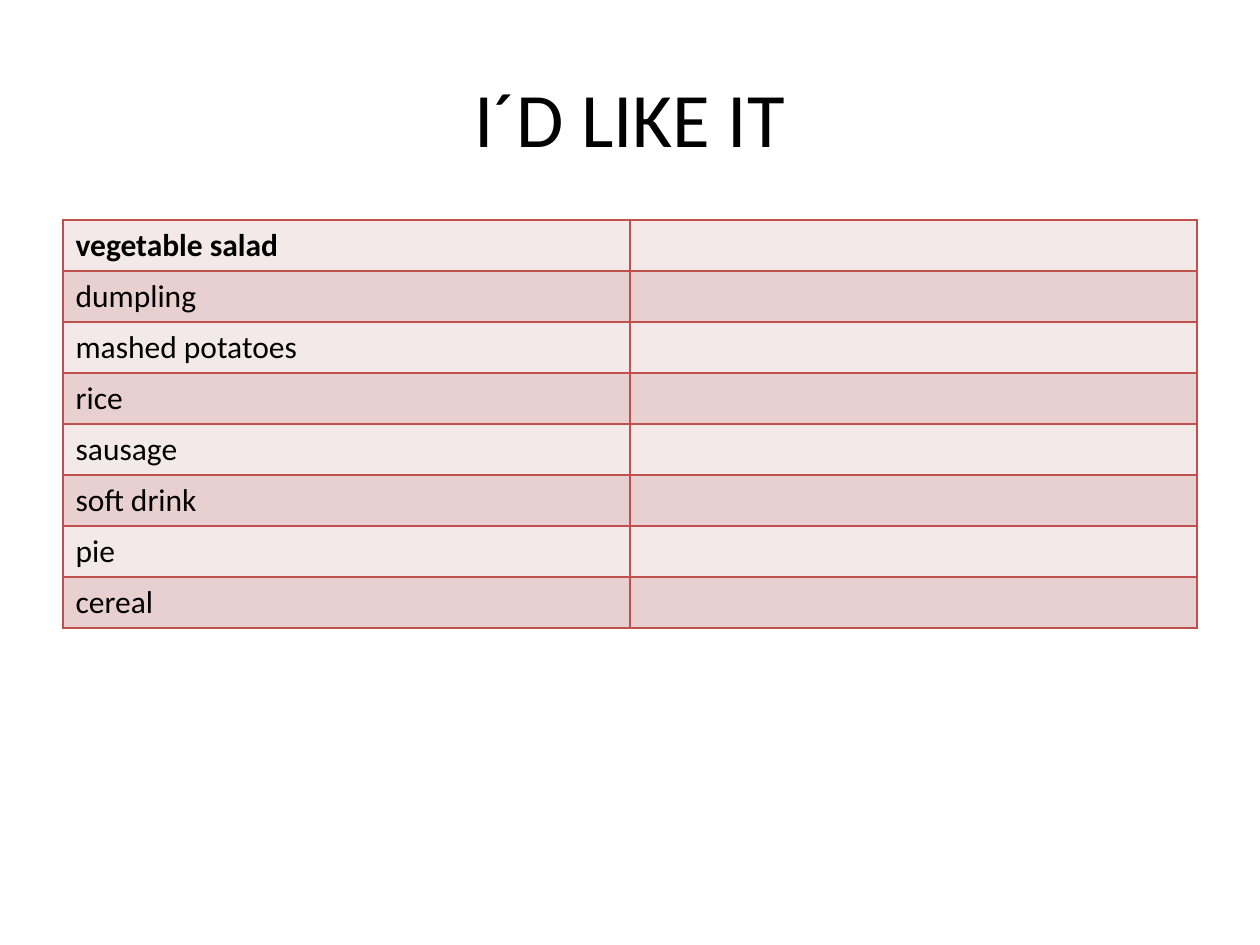
from lxml.etree import SubElement
from pptx import Presentation
from pptx.dml.color import RGBColor
from pptx.enum.text import MSO_ANCHOR, PP_ALIGN
from pptx.oxml.ns import qn
from pptx.util import Emu, Pt

PX_PER_INCH = 126
FONT = "Calibri"
COLORS = {
    "text": "000000",
    "border": "C0504D",
    "light": "F4E9E9",
    "dark": "E8D0D0",
}
FOODS = ["vegetable salad", "dumpling", "mashed potatoes", "rice",
         "sausage", "soft drink", "pie", "cereal"]


def px(n):
    return Emu(round(n * 914400 / PX_PER_INCH))


def rgb(name):
    return RGBColor.from_string(COLORS[name])


def style(p, size, bold=False):
    p.font.name = FONT
    p.font.size = Pt(size)
    p.font.bold = bold
    p.font.color.rgb = rgb("text")


def add_borders(cell):
    """Draw a 1 pt line on every side; lines must precede the fill."""
    tcPr = cell._tc.get_or_add_tcPr()
    for side in ("a:lnL", "a:lnR", "a:lnT", "a:lnB"):
        ln = SubElement(tcPr, qn(side), w=str(Pt(1)))
        fill = SubElement(ln, qn("a:solidFill"))
        SubElement(fill, qn("a:srgbClr"), val=COLORS["border"])


def add_title(slide, x, y, w, h, text):
    tf = slide.shapes.add_textbox(px(x), px(y), px(w), px(h)).text_frame
    tf.word_wrap = True
    tf.vertical_anchor = MSO_ANCHOR.MIDDLE
    p = tf.paragraphs[0]
    p.text = text
    p.alignment = PP_ALIGN.CENTER
    style(p, 44)


def add_food_table(slide, x, y, w, h, foods):
    """List the foods on the left, with an empty answer column beside them."""
    table = slide.shapes.add_table(len(foods), 2, px(x), px(y), px(w), px(h)).table
    for i, food in enumerate(foods):
        table.rows[i].height = px(h / len(foods))
        for cell, text in zip(table.rows[i].cells, (food, "")):
            cell.text = text
            style(cell.text_frame.paragraphs[0], 18, bold=i == 0)
            add_borders(cell)
            cell.fill.solid()
            cell.fill.fore_color.rgb = rgb("dark" if i % 2 else "light")


def main():
    prs = Presentation()
    prs.slide_width, prs.slide_height = px(1260), px(945)
    slide = prs.slides.add_slide(prs.slide_layouts[6])

    # Heading
    add_title(slide, 63, 38, 1134, 157, "I´D LIKE IT")
    # Food list
    add_food_table(slide, 63, 220, 1134, 408, FOODS)

    prs.save("out.pptx")


if __name__ == "__main__":
    main()
